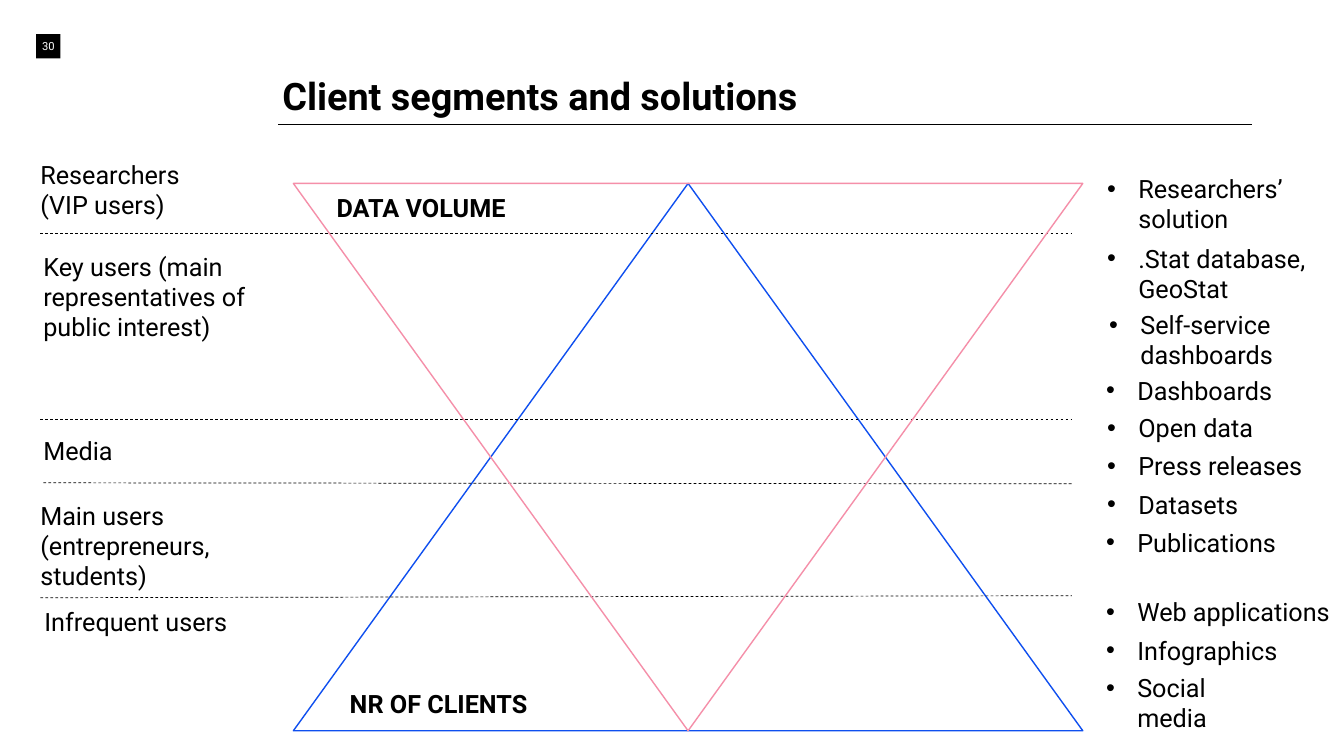
from dataclasses import dataclass

import pptx
import pptx.dml.color
import pptx.enum.dml
import pptx.enum.shapes
import pptx.enum.text
import pptx.oxml
import pptx.oxml.ns
import pptx.util
from pptx.shapes.base import BaseShape
from pptx.slide import Slide
from pptx.text.text import TextFrame

Inches = pptx.util.Inches
Pt = pptx.util.Pt
RGBColor = pptx.dml.color.RGBColor
MSO_ANCHOR = pptx.enum.text.MSO_ANCHOR
PP_ALIGN = pptx.enum.text.PP_ALIGN

BLACK = RGBColor(0x00, 0x00, 0x00)
WHITE = RGBColor(0xFF, 0xFF, 0xFF)
BLUE = RGBColor(0x0F, 0x4F, 0xEF)
PINK = RGBColor(0xF5, 0x8F, 0xA9)
FONT = "Roboto"

TRIANGLE_LEFT, TRIANGLE_RIGHT = 2.91, 10.74
TRIANGLE_TOP, TRIANGLE_BOTTOM = 1.82, 7.25
DIVIDER_RIGHT = 10.63


@dataclass(frozen=True)
class Label:
    text: str
    left: float
    top: float
    width: float
    height: float


@dataclass(frozen=True)
class Divider:
    left: float
    start: float
    end: float


SEGMENTS = [
    Label("Researchers\n(VIP users)", 0.4, 1.53, 2.01, 0.71),
    Label("Key users (main\nrepresentatives of public interest)", 0.43, 2.44, 2.2, 1.01),
    Label("Media", 0.43, 4.27, 2.2, 0.4),
    Label("Main users (entrepreneurs, students)", 0.4, 4.91, 2.22, 1.01),
    Label("Infrequent users", 0.44, 5.97, 2.19, 0.4),
]
SOLUTIONS = [
    Label("Researchers’ solution", 10.82, 1.72, 2.32, 0.61),
    Label(".Stat database, GeoStat", 10.82, 2.41, 2.32, 0.61),
    Label("Self-service dashboards", 10.84, 3.07, 2.33, 0.61),
    Label("Dashboards", 10.81, 3.72, 2.33, 0.3),
    Label("Open data", 10.82, 4.09, 2.35, 0.3),
    Label("Press releases", 10.82, 4.47, 2.3, 0.3),
    Label("Datasets", 10.82, 4.85, 2.32, 0.3),
    Label("Publications", 10.81, 5.23, 2.33, 0.3),
    Label("Web applications", 10.81, 5.92, 2.45, 0.3),
    Label("Infographics", 10.81, 6.3, 2.0, 0.3),
    Label("Social media", 10.81, 6.67, 1.6, 0.61),
]
TRIANGLE_NAMES = [
    Label("DATA VOLUME", 3.24, 1.86, 2.48, 0.4),
    Label("NR OF CLIENTS", 3.37, 6.78, 2.52, 0.4),
]
DIVIDERS = [
    Divider(0.4, 2.32, 2.32),
    Divider(0.4, 4.16, 4.16),
    Divider(0.43, 4.79, 4.8),
    Divider(0.4, 5.93, 5.91),
]


def set_margins(frame: TextFrame, left: float, top: float, right: float, bottom: float) -> None:
    frame.margin_left, frame.margin_top = Inches(left), Inches(top)
    frame.margin_right, frame.margin_bottom = Inches(right), Inches(bottom)


def format_text(frame: TextFrame, size: float, color: RGBColor = BLACK, bold: bool = False,
                align: PP_ALIGN = PP_ALIGN.LEFT) -> None:
    for paragraph in frame.paragraphs:
        paragraph.alignment = align
        for run in paragraph.runs:
            run.font.name = FONT
            run.font.size = Pt(size)
            run.font.bold = bold
            run.font.color.rgb = color


def add_box(slide: Slide, label: Label, fill: RGBColor) -> BaseShape:
    """Add a borderless filled rectangle holding the label's text."""
    shape = slide.shapes.add_shape(
        pptx.enum.shapes.MSO_SHAPE.RECTANGLE, Inches(label.left), Inches(label.top),
        Inches(label.width), Inches(label.height))
    shape.shadow.inherit = False
    shape.fill.solid()
    shape.fill.fore_color.rgb = fill
    shape.line.fill.background()
    shape.text_frame.word_wrap = True
    shape.text_frame.text = label.text
    return shape


def add_segment(slide: Slide, label: Label) -> None:
    frame = add_box(slide, label, WHITE).text_frame
    frame.vertical_anchor = MSO_ANCHOR.TOP
    set_margins(frame, 0, 0.05, 0.1, 0.05)
    format_text(frame, 18)


def add_text(slide: Slide, label: Label) -> TextFrame:
    frame = slide.shapes.add_textbox(
        Inches(label.left), Inches(label.top),
        Inches(label.width), Inches(label.height)).text_frame
    frame.word_wrap = True
    frame.text = label.text
    return frame


def add_solution(slide: Slide, label: Label) -> None:
    frame = add_text(slide, label)
    set_margins(frame, 0, 0, 0, 0)
    properties = frame.paragraphs[0]._p.get_or_add_pPr()
    properties.set("marL", str(Inches(0.47)))
    properties.set("indent", str(Inches(-0.31)))
    for tag, attribute, value in (("a:buFont", "typeface", "Arial"), ("a:buChar", "char", "•")):
        bullet = pptx.oxml.ns.qn(tag)
        properties.append(properties.makeelement(bullet, {attribute: value}))
    format_text(frame, 18)


def add_line(slide: Slide, left: float, start: float, right: float, end: float,
             dashed: bool = False) -> None:
    line = slide.shapes.add_connector(
        pptx.enum.shapes.MSO_CONNECTOR.STRAIGHT,
        Inches(left), Inches(start), Inches(right), Inches(end))
    line.line.color.rgb = BLACK
    line.line.width = Pt(0.5)
    if dashed:
        line.line.dash_style = pptx.enum.dml.MSO_LINE.DASH
    properties = line._element.spPr
    properties.append(properties.makeelement(pptx.oxml.ns.qn("a:effectLst"), {}))


def add_triangle(slide: Slide, base: float, apex: float, color: RGBColor) -> None:
    center = (TRIANGLE_LEFT + TRIANGLE_RIGHT) / 2
    builder = slide.shapes.build_freeform(
        Inches(TRIANGLE_LEFT), Inches(base), scale=1.0)
    builder.add_line_segments(
        [(Inches(center), Inches(apex)), (Inches(TRIANGLE_RIGHT), Inches(base))], close=True)
    triangle = builder.convert_to_shape()
    triangle.shadow.inherit = False
    triangle.fill.background()
    triangle.line.color.rgb = color
    triangle.line.width = Pt(1)


def add_title(slide: Slide) -> None:
    title = slide.shapes.title
    title.left, title.top = Inches(2.76), Inches(0.33)
    title.width, title.height = Inches(9.66), Inches(0.89)
    frame = title.text_frame
    frame.text = "Client segments and solutions"
    frame.vertical_anchor = MSO_ANCHOR.BOTTOM
    frame.paragraphs[0].line_spacing = 0.9
    set_margins(frame, 0.04, 0.04, 0.04, 0.04)
    format_text(frame, 27, bold=True)
    add_line(slide, 2.76, 1.23, 12.42, 1.23)


def add_page_number(slide: Slide) -> None:
    frame = add_box(slide, Label("30", 0.36, 0.34, 0.24, 0.24), BLACK).text_frame
    frame.vertical_anchor = MSO_ANCHOR.MIDDLE
    set_margins(frame, 0, 0, 0, 0)
    format_text(frame, 8, WHITE, align=PP_ALIGN.CENTER)


def main() -> None:
    presentation = pptx.Presentation()
    presentation.slide_width, presentation.slide_height = Inches(13.33), Inches(7.5)
    slide = presentation.slides.add_slide(presentation.slide_layouts[5])
    add_title(slide)
    add_page_number(slide)
    add_triangle(slide, TRIANGLE_BOTTOM, TRIANGLE_TOP, BLUE)
    for segment in SEGMENTS:
        add_segment(slide, segment)
    for divider in DIVIDERS:
        add_line(slide, divider.left, divider.start, DIVIDER_RIGHT, divider.end, dashed=True)
    for solution in SOLUTIONS:
        add_solution(slide, solution)
    for name in TRIANGLE_NAMES:
        format_text(add_text(slide, name), 18, bold=True)
    add_triangle(slide, TRIANGLE_TOP, TRIANGLE_BOTTOM, PINK)
    presentation.save("out.pptx")


if __name__ == "__main__":
    main()
